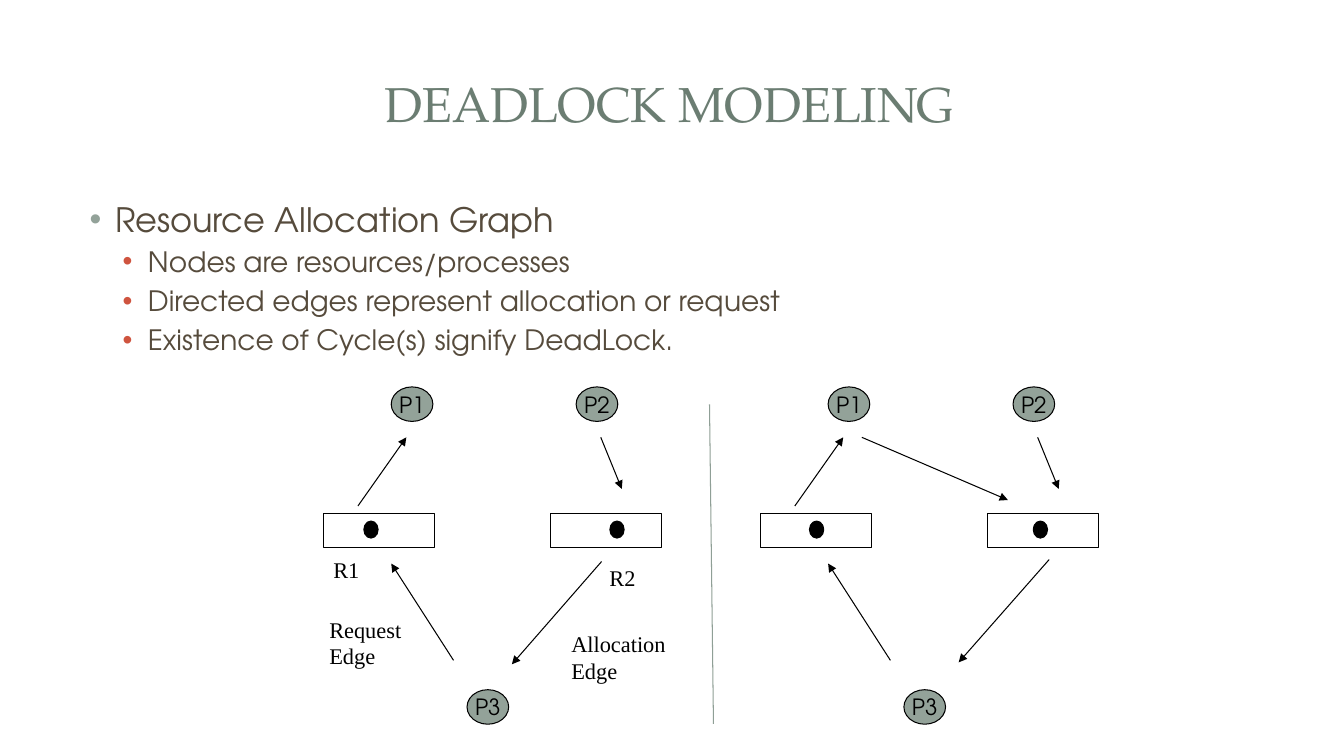
from typing import NamedTuple

from lxml import etree
from pptx import Presentation
from pptx.dml.color import RGBColor
from pptx.enum.shapes import MSO_CONNECTOR, MSO_SHAPE
from pptx.enum.text import MSO_ANCHOR, PP_ALIGN
from pptx.oxml.ns import qn
from pptx.util import Cm, Pt

CIRCLE = MSO_SHAPE.FLOWCHART_CONNECTOR
RECTANGLE = MSO_SHAPE.RECTANGLE
STRAIGHT = MSO_CONNECTOR.STRAIGHT
CENTER = PP_ALIGN.CENTER
LEFT = PP_ALIGN.LEFT
MIDDLE = MSO_ANCHOR.MIDDLE
TOP = MSO_ANCHOR.TOP

BLACK = RGBColor(0x00, 0x00, 0x00)
WHITE = RGBColor(0xFF, 0xFF, 0xFF)
SAGE = RGBColor(0x93, 0xA2, 0x99)
DIVIDER = RGBColor(0x8F, 0x9F, 0x96)
TITLE = RGBColor(0x6B, 0x7D, 0x72)
BROWN = RGBColor(0x56, 0x4B, 0x3C)
RED = RGBColor(0xCF, 0x54, 0x3F)

SANS = "TeX Gyre Adventor"
DISPLAY = "TeX Gyre Pagella"
SERIF = "Times New Roman"
LINE_WIDTH = Pt(0.75)
GRAPH_STEP = 11.01


class Box(NamedTuple):
    x: float
    y: float
    w: float
    h: float


class Font(NamedTuple):
    name: str
    size: float
    color: RGBColor


class Edge(NamedTuple):
    x1: float
    y1: float
    x2: float
    y2: float


class Bullet(NamedTuple):
    text: str
    level: int


class BulletStyle(NamedTuple):
    size: float
    margin: float
    color: RGBColor


class Label(NamedTuple):
    text: str
    box: Box


class Graph(NamedTuple):
    dots: list[float]
    edges: list[Edge]


PROCESSES = [
    Label("P1", Box(9.86, 9.75, 1.05, 0.87)),
    Label("P2", Box(14.52, 9.75, 1.05, 0.87)),
    Label("P3", Box(11.77, 17.38, 1.05, 0.87)),
]
RESOURCES = [Box(x, 12.93, 2.8, 0.87) for x in (8.15, 13.88)]
SHARED_EDGES = [
    Edge(9.02, 12.75, 10.24, 11.02),
    Edge(15.14, 11.02, 15.67, 12.32),
    Edge(11.43, 16.64, 9.86, 14.2),
]
GRAPHS = [
    Graph([9.17, 15.37], [Edge(15.16, 14.15, 12.9, 16.74)]),
    Graph([9.39, 15.03], [Edge(15.43, 14.1, 13.15, 16.69),
                          Edge(10.71, 11.02, 14.39, 12.6)]),
]
LABELS = [
    Label("R1", Box(8.15, 13.89, 1.4, 0.94)),
    Label("R2", Box(15.11, 14.1, 1.57, 0.94)),
    Label("Request\nEdge", Box(8.05, 15.39, 2.44, 1.63)),
    Label("Allocation\nEdge", Box(14.15, 15.75, 3.23, 1.63)),
]
BULLETS = [
    Bullet("Resource Allocation Graph", 0),
    Bullet("Nodes are resources/processes", 1),
    Bullet("Directed edges represent allocation or request", 1),
    Bullet("Existence of Cycle(s) signify DeadLock.", 1),
]
BULLET_STYLES = [BulletStyle(24, 0.95, SAGE), BulletStyle(20, 1.78, RED)]


def lengths(box: Box) -> list[Cm]:
    return [Cm(value) for value in box]


def format_runs(p, font: Font) -> None:
    for r in p.runs:
        r.font.name = font.name
        r.font.size = Pt(font.size)
        r.font.color.rgb = font.color


def write(sp, text: str, font: Font, align=LEFT, anchor=TOP, wrap: bool = True) -> None:
    tf = sp.text_frame
    tf.text = text
    tf.word_wrap = wrap
    tf.vertical_anchor = anchor
    for p in tf.paragraphs:
        p.alignment = align
        format_runs(p, font)


def add_text(s, box: Box, text: str, font: Font, align=LEFT, anchor=TOP) -> None:
    write(s.shapes.add_textbox(*lengths(box)), text, font, align, anchor)


def add_node(s, kind, box: Box, fill: RGBColor):
    sp = s.shapes.add_shape(kind, *lengths(box))
    sp.shadow.inherit = False
    sp.fill.solid()
    sp.fill.fore_color.rgb = fill
    sp.line.color.rgb = BLACK
    sp.line.width = LINE_WIDTH
    return sp


def add_line(s, edge: Edge, color: RGBColor, arrow: bool) -> None:
    line = s.shapes.add_connector(STRAIGHT, *[Cm(value) for value in edge])
    line.line.color.rgb = color
    line.line.width = LINE_WIDTH
    if arrow:
        etree.SubElement(line.line._ln, qn("a:tailEnd"), type="triangle")
    etree.SubElement(line._element.spPr, qn("a:effectLst"))


def add_bullets(s, box: Box, bullets: list[Bullet]) -> None:
    tf = s.shapes.add_textbox(*lengths(box)).text_frame
    tf.word_wrap = True
    tf.text = "\n".join(bullet.text for bullet in bullets)
    for p, bullet in zip(tf.paragraphs, bullets):
        style = BULLET_STYLES[bullet.level]
        p.level = bullet.level
        p.space_before = Pt(style.size * 0.2)
        format_runs(p, Font(SANS, style.size, BROWN))
        pPr = p._p.get_or_add_pPr()
        pPr.set("marL", str(Cm(style.margin)))
        pPr.set("indent", str(-Cm(0.64)))
        color = etree.SubElement(pPr, qn("a:buClr"))
        etree.SubElement(color, qn("a:srgbClr"), val=str(style.color))
        etree.SubElement(pPr, qn("a:buFont"), typeface="Arial")
        etree.SubElement(pPr, qn("a:buChar"), char="•")


def add_graph(s, graph: Graph, dx: float) -> None:
    for process in PROCESSES:
        box = process.box._replace(x=process.box.x + dx)
        sp = add_node(s, CIRCLE, box, SAGE)
        write(sp, process.text, Font(SANS, 16, BLACK), CENTER, MIDDLE, False)
    for box in RESOURCES:
        add_node(s, RECTANGLE, box._replace(x=box.x + dx), WHITE)
    for x in graph.dots:
        add_node(s, CIRCLE, Box(x + dx, 13.13, 0.36, 0.43), BLACK)
    for edge in SHARED_EDGES + graph.edges:
        add_line(s, edge._replace(x1=edge.x1 + dx, x2=edge.x2 + dx), BLACK, True)


def main() -> None:
    prs = Presentation()
    prs.slide_width, prs.slide_height = Cm(33.87), Cm(19.05)
    s = prs.slides.add_slide(prs.slide_layouts[6])
    add_text(s, Box(1.57, 1.14, 30.61, 2.9), "DEADLOCK MODELING",
             Font(DISPLAY, 35, TITLE), CENTER, MIDDLE)
    add_bullets(s, Box(1.7, 4.88, 30.48, 12.14), BULLETS)
    for i, graph in enumerate(GRAPHS):
        add_graph(s, graph, i * GRAPH_STEP)
    add_line(s, Edge(17.88, 10.19, 17.98, 18.24), DIVIDER, False)
    for label in LABELS:
        add_text(s, label.box, label.text, Font(SERIF, 16, BLACK))
    prs.save("out.pptx")


if __name__ == "__main__":
    main()
